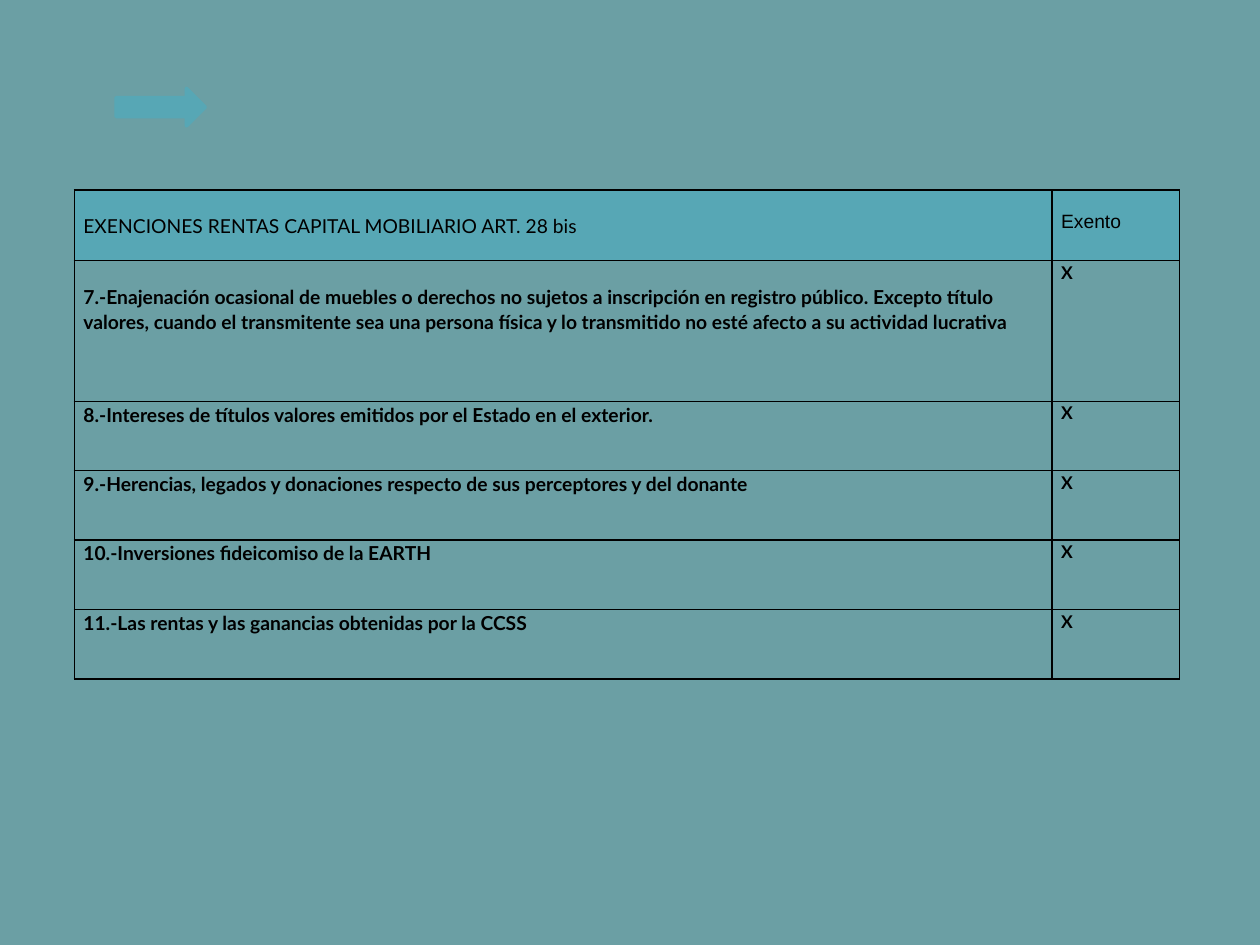
from lxml.etree import SubElement
from pptx import Presentation
from pptx.dml.color import RGBColor
from pptx.enum.shapes import MSO_SHAPE as Shape
from pptx.enum.text import PP_ALIGN as Align
from pptx.oxml.ns import qn
from pptx.util import Cm, Pt

HUES = {"back": "6B9FA4", "teal": "57A7B5", "ink": "000000"}
COLS = [19.71, 2.57]
ROWS = [1.42, 2.84, 1.4, 1.4, 1.4, 1.4]
HEADS = ["EXENCIONES RENTAS CAPITAL MOBILIARIO ART. 28 bis", "Exento"]
ITEMS = [
    "7.-Enajenación ocasional de muebles o derechos no sujetos a inscripción "
    "en registro público. Excepto título valores, cuando el transmitente sea "
    "una persona física y lo transmitido no esté afecto a su actividad lucrativa",
    "8.-Intereses de títulos valores emitidos por el Estado en el exterior.",
    "9.-Herencias, legados y donaciones respecto de sus perceptores y del donante",
    "10.-Inversiones fideicomiso de la EARTH",
    "11.-Las rentas y las ganancias obtenidas por la CCSS",
]


def tint(name):
    return RGBColor.from_string(HUES[name])


class Deck:
    """Holds the slide and its style."""

    def __init__(self, wide, high):
        self.prs = Presentation()
        self.prs.slide_width, self.prs.slide_height = Cm(wide), Cm(high)
        self.slide = self.prs.slides.add_slide(self.prs.slide_layouts[6])
        fill = self.slide.background.fill
        fill.solid()
        fill.fore_color.rgb = tint("back")

    def arrow(self, x, y, w, h):
        box = self.slide.shapes.add_shape(
            Shape.RIGHT_ARROW, Cm(x), Cm(y), Cm(w), Cm(h))
        box.shadow.inherit = False
        box.fill.solid()
        box.fill.fore_color.rgb = tint("teal")
        box.line.color.rgb = tint("teal")
        box.line.width = Pt(2)

    def table(self, x, y, cols, rows):
        grid = self.slide.shapes.add_table(
            len(rows), len(cols), Cm(x), Cm(y),
            Cm(sum(cols)), Cm(sum(rows))).table
        for col, wide in zip(grid.columns, cols):
            col.width = Cm(wide)
        for row, high in zip(grid.rows, rows):
            row.height = Cm(high)
        return grid

    def edge(self, cell):
        """Draws the four borders of a cell."""
        props = cell._tc.get_or_add_tcPr()
        for at, side in enumerate(("a:lnL", "a:lnR", "a:lnT", "a:lnB")):
            line = SubElement(props, qn(side), w=str(Pt(1)))
            fill = SubElement(line, qn("a:solidFill"))
            SubElement(fill, qn("a:srgbClr"), val=HUES["ink"])
            props.remove(line)
            props.insert(at, line)

    def cell(self, cell, text, size=11, font="Lato", bold=True, top=0,
             fill=None, align=Align.LEFT):
        cell.margin_left = cell.margin_right = Cm(0.18)
        cell.margin_top, cell.margin_bottom = Cm(top), Cm(0)
        if fill:
            cell.fill.solid()
            cell.fill.fore_color.rgb = tint(fill)
        else:
            cell.fill.background()
        self.edge(cell)
        para = cell.text_frame.paragraphs[0]
        para.alignment = align
        para.line_spacing = 1.07
        run = para.add_run()
        run.text = text
        run.font.name, run.font.size, run.font.bold = font, Pt(size), bold
        run.font.color.rgb = tint("ink")

    def save(self):
        self.prs.save("out.pptx")


def main():
    deck = Deck(25.4, 19.05)
    grid = deck.table(1.5, 3.83, COLS, ROWS)
    fonts, tops = ["Lato", "Arial"], [0.47, 0.4]
    for col, (text, font, top) in enumerate(zip(HEADS, fonts, tops)):
        deck.cell(grid.cell(0, col), text, font=font, bold=False, top=top,
                  fill="teal", align=Align.JUSTIFY)
    for row, text in enumerate(ITEMS, 1):
        deck.cell(grid.cell(row, 0), text, top=0.48 if row == 1 else 0)
        deck.cell(grid.cell(row, 1), "X", size=10)
    deck.arrow(2.34, 1.78, 1.8, 0.76)
    deck.save()


if __name__ == "__main__":
    main()
